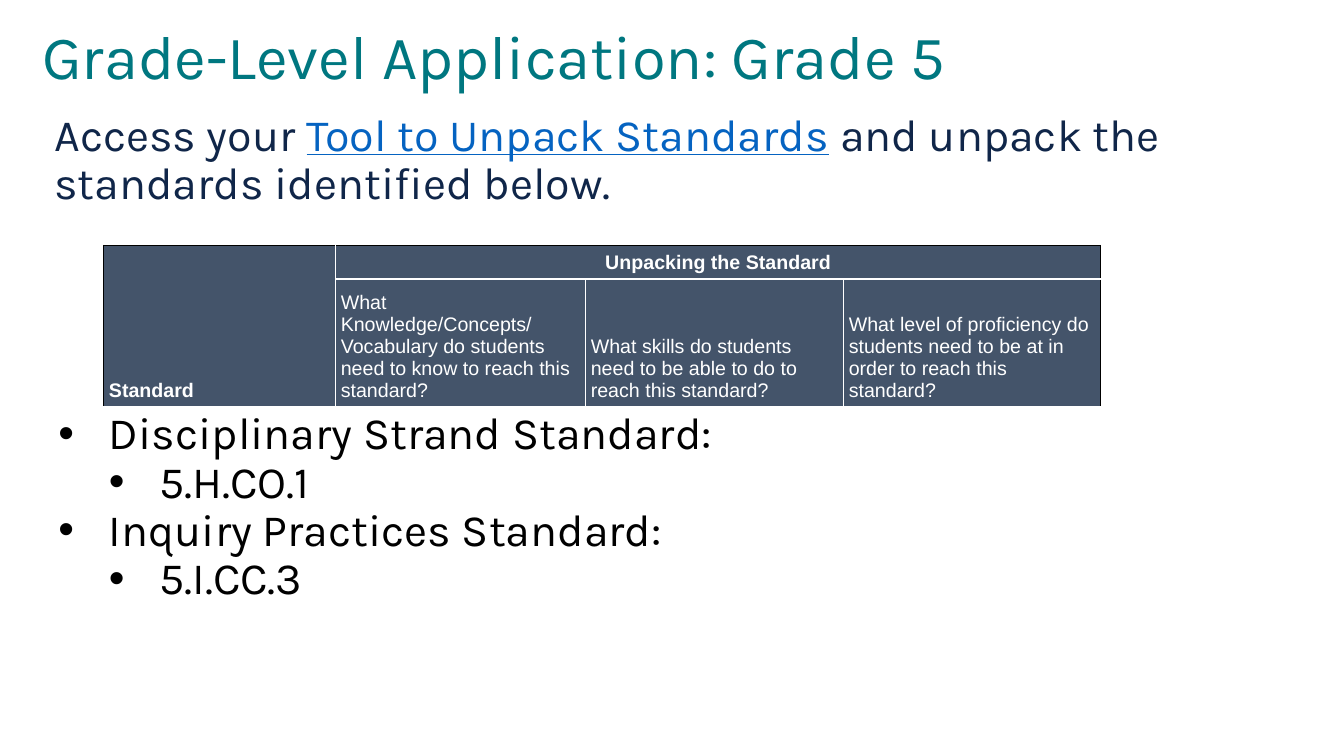
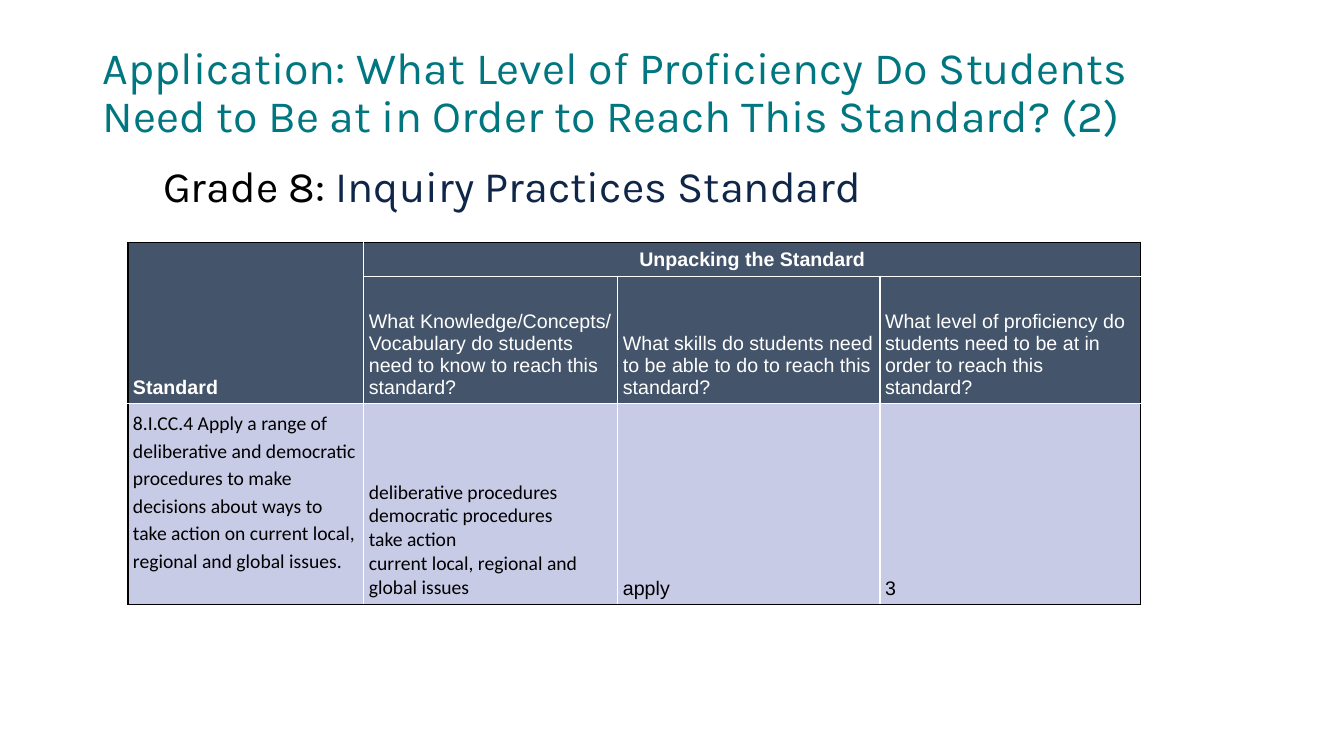
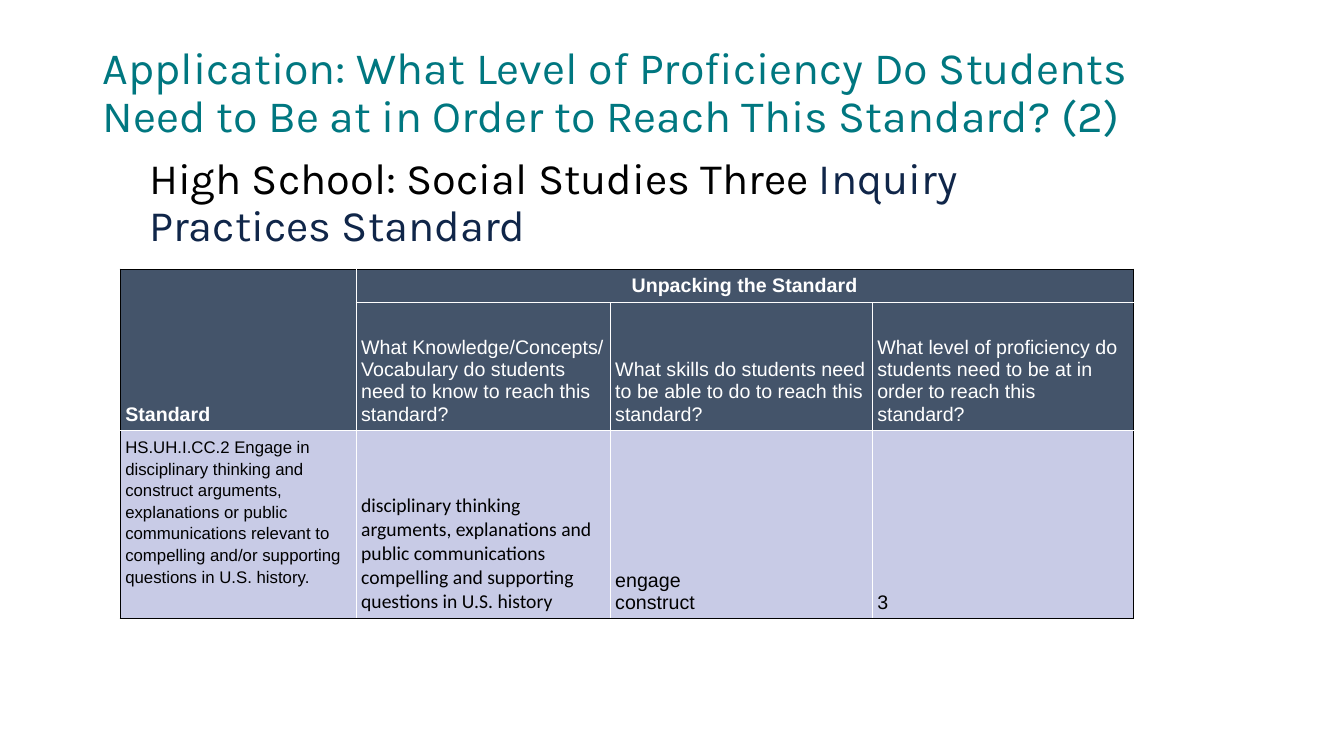
"""Builds three slides on unpacking social studies standards."""
from lxml.etree import SubElement
from pptx import Presentation
from pptx.dml.color import RGBColor
from pptx.enum.text import MSO_ANCHOR, MSO_AUTO_SIZE, PP_ALIGN
from pptx.oxml.ns import qn
from pptx.util import Pt

TEAL = RGBColor(0x00, 0x77, 0x80)
NAVY = RGBColor(0x10, 0x26, 0x49)
LINK_BLUE = RGBColor(0x05, 0x63, 0xC1)
SLATE = RGBColor(0x44, 0x54, 0x6A)
LAVENDER = RGBColor(0xC8, 0xCB, 0xE6)
BLACK = RGBColor(0, 0, 0)
WHITE = RGBColor(0xFF, 0xFF, 0xFF)

HEADING_FONT = "Karla"
TABLE_FONT = "Arial"
DETAIL_FONT = "Calibri"
HEADER_ROWS = 2
CELL_MARGIN = 3.6

QUESTIONS = [
    "What Knowledge/Concepts/ Vocabulary do students need to know to reach this standard?",
    "What skills do students need to be able to do to reach this standard?",
    "What level of proficiency do students need to be at in order to reach this standard?",
]
HEADER = [["Standard", "Unpacking the Standard", "", ""], [""] + QUESTIONS]

PROFICIENCY_TITLE = {
    "text": "Application: What Level of Proficiency Do Students Need to Be at "
            "in Order to Reach This Standard? (2)",
    "box": (66, 28.8, 828, 104.4),
    "size": 32,
}
WIDE_COLUMNS = (168.5, 181.5, 187.2, 186.4)

SLIDES = [
    {
        "title": {
            "text": "Grade-Level Application: Grade 5",
            "box": (23, 15.1, 762.5, 103.7),
            "size": 44,
        },
        "lead": {
            "runs": [
                ("Access your ", NAVY),
                ("Tool to Unpack Standards", LINK_BLUE),
                (" and unpack the standards identified below.", NAVY),
            ],
            "box": (31.7, 77, 894.2, 80),
            "size": 32,
        },
        "table": {
            "corner": (74.2, 175.3),
            "columns": (165.6, 178.6, 184.3, 183.6),
            "rows": (22.9, 85.7),
            "body": [],
        },
        "bullets": {
            "items": [
                (0, "Disciplinary Strand Standard:"),
                (1, "5.H.CO.1"),
                (0, "Inquiry Practices Standard:"),
                (1, "5.I.CC.3"),
            ],
            "box": (31.7, 290, 894.2, 160),
            "size": 32,
        },
    },
    {
        "title": PROFICIENCY_TITLE,
        "lead": {
            "runs": [("Grade 8:", BLACK), (" Inquiry Practices Standard", NAVY)],
            "box": (109.4, 114.5, 723.6, 50),
            "size": 31,
        },
        "table": {
            "corner": (91.4, 173.3),
            "columns": WIDE_COLUMNS,
            "rows": (24, 91, 143.6),
            "standard_font": (DETAIL_FONT, 14),
            "body": [
                "8.I.CC.4 Apply a range of deliberative and democratic procedures to make "
                "decisions about ways to take action on current local, regional and global issues.",
                "deliberative procedures\ndemocratic procedures\ntake action\n"
                "current local, regional and global issues",
                "apply",
                "3",
            ],
        },
    },
    {
        "title": PROFICIENCY_TITLE,
        "lead": {
            "runs": [
                ("High School: Social Studies Three ", BLACK),
                ("Inquiry Practices Standard", NAVY),
            ],
            "box": (99.4, 108.7, 723.6, 80),
            "size": 31,
        },
        "table": {
            "corner": (85.9, 192.3),
            "columns": WIDE_COLUMNS,
            "rows": (24, 91, 134.4),
            "standard_font": (TABLE_FONT, 12),
            "body": [
                "HS.UH.I.CC.2 Engage in disciplinary thinking and construct arguments, "
                "explanations or public communications relevant to compelling and/or "
                "supporting questions in U.S. history.",
                "disciplinary thinking\narguments, explanations and public communications\n"
                "compelling and supporting questions in U.S. history",
                "engage\nconstruct",
                "3",
            ],
        },
    },
]


def style_font(font, name, size, color, bold=False):
    font.name = name
    font.size = Pt(size)
    font.color.rgb = color
    font.bold = bold


def add_title(slide, title):
    shape = slide.shapes.title
    shape.left, shape.top, shape.width, shape.height = map(Pt, title["box"])
    text_frame = shape.text_frame
    text_frame.text = title["text"]
    text_frame.word_wrap = True
    text_frame.auto_size = MSO_AUTO_SIZE.NONE
    text_frame.vertical_anchor = MSO_ANCHOR.TOP
    paragraph = text_frame.paragraphs[0]
    paragraph.alignment = PP_ALIGN.LEFT
    paragraph.line_spacing = 0.9
    style_font(paragraph.runs[0].font, HEADING_FONT, title["size"], TEAL)


def add_text_frame(slide, box):
    text_frame = slide.shapes.add_textbox(*map(Pt, box)).text_frame
    text_frame.word_wrap = True
    return text_frame


def add_lead(slide, lead):
    paragraph = add_text_frame(slide, lead["box"]).paragraphs[0]
    paragraph.line_spacing = 0.9
    for text, color in lead["runs"]:
        run = paragraph.add_run()
        run.text = text
        style_font(run.font, HEADING_FONT, lead["size"], color)
        run.font.underline = color == LINK_BLUE


def add_bullets(slide, bullets):
    text_frame = add_text_frame(slide, bullets["box"])
    text_frame.text = "\n".join(text for _, text in bullets["items"])
    for paragraph, (level, _) in zip(text_frame.paragraphs, bullets["items"]):
        paragraph.level = level
        paragraph.line_spacing = 0.9
        properties = paragraph._p.get_or_add_pPr()
        properties.set("marL", str(Pt(39 + 36 * level)))
        properties.set("indent", str(Pt(-36)))
        bullet_color = SubElement(properties, qn("a:buClr"))
        SubElement(bullet_color, qn("a:srgbClr"), val=str(BLACK))
        SubElement(properties, qn("a:buFont"), typeface="Arial")
        SubElement(properties, qn("a:buChar"), char="•")
        style_font(paragraph.runs[0].font, HEADING_FONT, bullets["size"], BLACK)


def set_borders(cell, colors):
    properties = cell._tc.get_or_add_tcPr()
    for position, (side, color) in enumerate(colors.items()):
        line = properties.makeelement(qn(f"a:ln{side}"), {"w": str(Pt(1))})
        fill = SubElement(line, qn("a:solidFill"))
        SubElement(fill, qn("a:srgbClr"), val=str(color))
        properties.insert(position, line)


def style_cell(cell, row, column, column_count, standard_font):
    is_header = row < HEADER_ROWS
    is_standard = not is_header and column == 0
    font_name, size = TABLE_FONT, 14
    if is_standard:
        font_name, size = standard_font
    elif not is_header and column == 1:
        font_name = DETAIL_FONT
    cell.margin_left = cell.margin_right = Pt(CELL_MARGIN)
    cell.margin_top = cell.margin_bottom = Pt(CELL_MARGIN)
    cell.vertical_anchor = MSO_ANCHOR.TOP if is_standard else MSO_ANCHOR.BOTTOM
    cell.fill.solid()
    cell.fill.fore_color.rgb = SLATE if is_header else LAVENDER
    for paragraph in cell.text_frame.paragraphs:
        if is_standard:
            paragraph.line_spacing = 1.15
        for run in paragraph.runs:
            style_font(run.font, font_name, size, WHITE if is_header else BLACK, bold=row == 0)
    if cell.span_width > 1:
        cell.vertical_anchor = MSO_ANCHOR.MIDDLE
        cell.text_frame.paragraphs[0].alignment = PP_ALIGN.CENTER
    set_borders(cell, {
        "L": BLACK if column == 0 else WHITE,
        "R": BLACK if column + cell.span_width == column_count else WHITE,
        "T": BLACK if row == 0 else WHITE,
        "B": WHITE if is_header else BLACK,
    })


def add_standards_table(slide, content):
    columns, rows = content["columns"], content["rows"]
    box = (*content["corner"], sum(columns), sum(rows))
    table = slide.shapes.add_table(len(rows), len(columns), *map(Pt, box)).table
    table.first_row = table.horz_banding = False
    for column, width in zip(table.columns, columns):
        column.width = Pt(width)
    for row, height in zip(table.rows, rows):
        row.height = Pt(height)
    table.cell(0, 0).merge(table.cell(1, 0))
    table.cell(0, 1).merge(table.cell(0, len(columns) - 1))
    texts = HEADER + ([content["body"]] if content["body"] else [])
    for row, row_texts in enumerate(texts):
        for column, text in enumerate(row_texts):
            cell = table.cell(row, column)
            if text:
                cell.text_frame.text = text
            style_cell(cell, row, column, len(columns), content.get("standard_font"))


def main():
    presentation = Presentation()
    presentation.slide_width, presentation.slide_height = Pt(960), Pt(540)
    title_only = presentation.slide_layouts[5]
    for content in SLIDES:
        slide = presentation.slides.add_slide(title_only)
        add_title(slide, content["title"])
        add_lead(slide, content["lead"])
        add_standards_table(slide, content["table"])
        if "bullets" in content:
            add_bullets(slide, content["bullets"])
    presentation.save("out.pptx")


if __name__ == "__main__":
    main()
